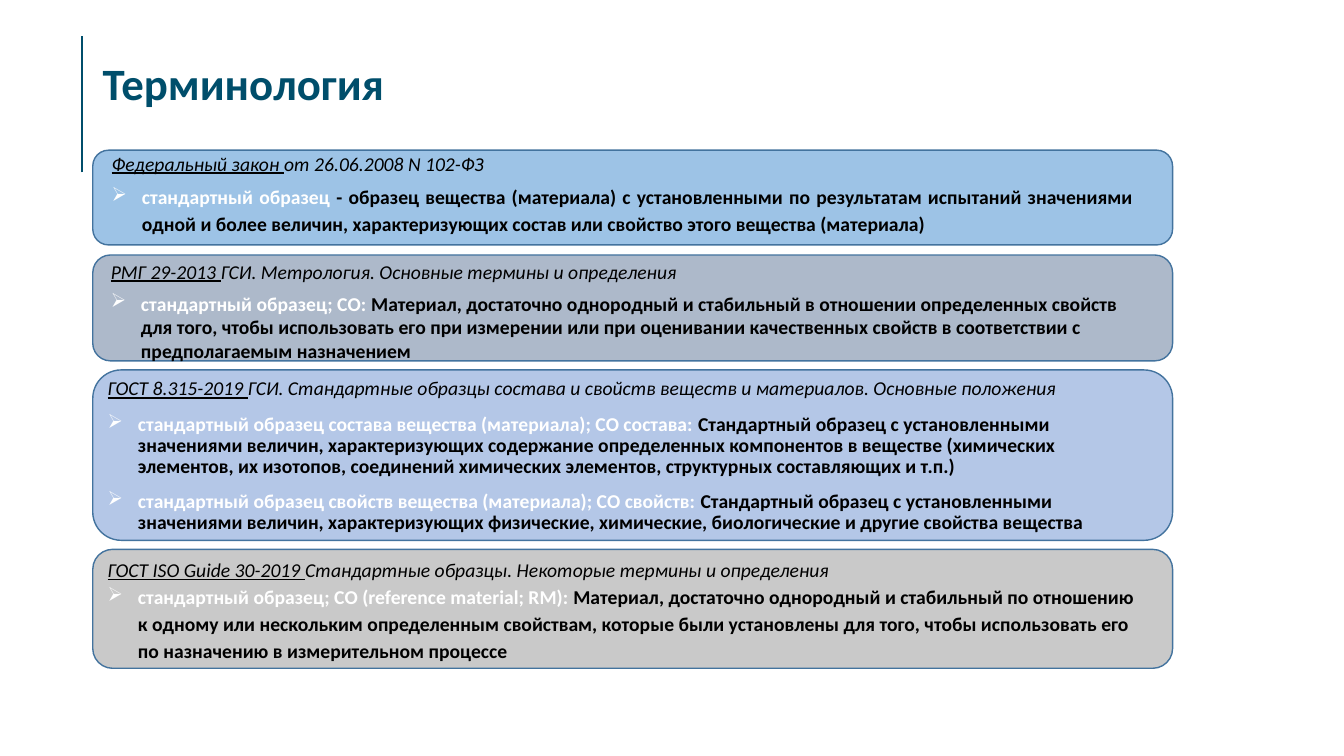
from lxml import etree
from pptx import Presentation
from pptx import util as u
from pptx.dml.color import RGBColor
from pptx.enum import shapes, text
from pptx.oxml.ns import qn

INK, WHITE, TEAL, EDGE = "000000", "FFFFFF", "004E6B", "43739E"
LEFT, WIDTH = 0.92, 10.71


def tint(code):
    return RGBColor.from_string(code)


def add_run(para, words, size=14, color=INK, bold=False, italic=False, under=False):
    run = para.add_run()
    run.text = words
    font = run.font
    font.name, font.size = "Calibri", u.Pt(size)
    font.bold, font.italic, font.underline = bold, italic, under
    font.color.rgb = tint(color)


def add_para(frame, first=False, bullet=False, align=None, line=1.0, before=0, after=0):
    para = frame.paragraphs[0] if first else frame.add_paragraph()
    if bullet:
        props = para._p.get_or_add_pPr()
        props.set("marL", str(u.Inches(0.3)))
        props.set("indent", str(-u.Inches(0.3)))
        etree.SubElement(props, qn("a:buChar")).set("char", "➢")
    para.alignment = align
    para.line_spacing = line
    para.space_before = u.Pt(0 if first else before)
    para.space_after = u.Pt(after)
    return para


def add_box(slide, x, y, w, h, anchor=text.MSO_ANCHOR.TOP):
    box = slide.shapes.add_textbox(*map(u.Inches, (x, y, w, h)))
    frame = box.text_frame
    frame.word_wrap = True
    frame.vertical_anchor = anchor
    return frame


def add_title(slide, x, y, w, h, words):
    # Vertical rule beside the heading
    rule = slide.shapes.add_connector(
        shapes.MSO_CONNECTOR.STRAIGHT, *map(u.Inches, (0.81, 1.71, 0.81, 0.36)))
    rule.line.color.rgb = tint(TEAL)
    rule.line.width = u.Pt(1.65)
    etree.SubElement(rule._element.spPr, qn("a:effectLst"))
    # Heading
    frame = add_box(slide, x, y, w, h, text.MSO_ANCHOR.MIDDLE)
    add_run(add_para(frame, first=True, line=0.9), words, size=32, color=TEAL, bold=True)


def add_card(slide, y, h, fill, box, source, terms, head, body):
    # Rounded panel
    card = slide.shapes.add_shape(
        shapes.MSO_SHAPE.ROUNDED_RECTANGLE, *map(u.Inches, (LEFT, y, WIDTH, h)))
    card.shadow.inherit = False
    card.fill.solid()
    card.fill.fore_color.rgb = tint(fill)
    card.line.color.rgb = tint(EDGE)
    card.line.width = u.Pt(1)
    # Source line, then one bullet per term; the box is offset from the panel
    dx, dy, w, tall = box
    frame = add_box(slide, LEFT + dx, y + dy, w, tall)
    para = add_para(frame, first=True, **head)
    add_run(para, source[0], italic=True, under=True)
    add_run(para, source[1], italic=True)
    for term, sense in terms:
        para = add_para(frame, bullet=True, **body)
        add_run(para, term, color=WHITE, bold=True)
        add_run(para, sense, bold=True)


LAW = dict(align=text.PP_ALIGN.JUSTIFY, line=1.15, after=4.5)
TIGHT = dict(line=0.9, before=10)
LOOSE = dict(line=1.15)

CARDS = [
    dict(y=1.49, h=0.94, fill="9DC3E6", box=(0.09, -0.07, 10.33, 1.36), head=LAW, body=LAW,
         source=("Федеральный закон ", "от 26.06.2008 N 102-ФЗ"),
         terms=[("стандартный образец ",
                 "- образец вещества (материала) с установленными по результатам испытаний "
                 "значениями одной и более величин, характеризующих состав или свойство "
                 "этого вещества (материала)")]),
    dict(y=2.53, h=1.05, fill="ADB9CA", box=(0.08, -0.04, 10.45, 1.16),
         head=dict(line=1.15, after=6.1), body={},
         source=("РМГ 29-2013 ", "ГСИ. Метрология. Основные термины и определения"),
         terms=[("стандартный образец; СО: ",
                 "Материал, достаточно однородный и стабильный в отношении определенных "
                 "свойств для того, чтобы использовать его при измерении или при оценивании "
                 "качественных свойств в соответствии с предполагаемым назначением")]),
    dict(y=3.67, h=1.69, fill="B4C7E7", box=(0.05, 0.04, 10.27, 1.65), head=TIGHT, body=TIGHT,
         source=("ГОСТ 8.315-2019 ", "ГСИ. Стандартные образцы состава и свойств веществ "
                 "и материалов. Основные положения"),
         terms=[("стандартный образец состава вещества (материала); СО состава: ",
                 "Стандартный образец с установленными значениями величин, характеризующих "
                 "содержание определенных компонентов в веществе (химических элементов, их "
                 "изотопов, соединений химических элементов, структурных составляющих и т.п.)"),
                ("стандартный образец свойств вещества (материала); СО свойств: ",
                 "Стандартный образец с установленными значениями величин, характеризующих "
                 "физические, химические, биологические и другие свойства вещества")]),
    dict(y=5.45, h=1.18, fill="C9C9C9", box=(0.05, 0, 10.45, 1.18), head=LOOSE, body=LOOSE,
         source=("ГОСТ ISO Guide 30-2019 ",
                 "Стандартные образцы. Некоторые термины и определения"),
         terms=[("стандартный образец; СО (reference material; RM): ",
                 "Материал, достаточно однородный и стабильный по отношению к одному или "
                 "нескольким определенным свойствам, которые были установлены для того, чтобы "
                 "использовать его по назначению в измерительном процессе")]),
]


def main():
    deck = Presentation()
    deck.slide_width, deck.slide_height = u.Inches(13.33), u.Inches(7.5)
    slide = deck.slides.add_slide(deck.slide_layouts[6])
    add_title(slide, LEFT, 0.4, 11.5, 0.91, "Терминология")
    for card in CARDS:
        add_card(slide, **card)
    deck.save("out.pptx")


if __name__ == "__main__":
    main()
